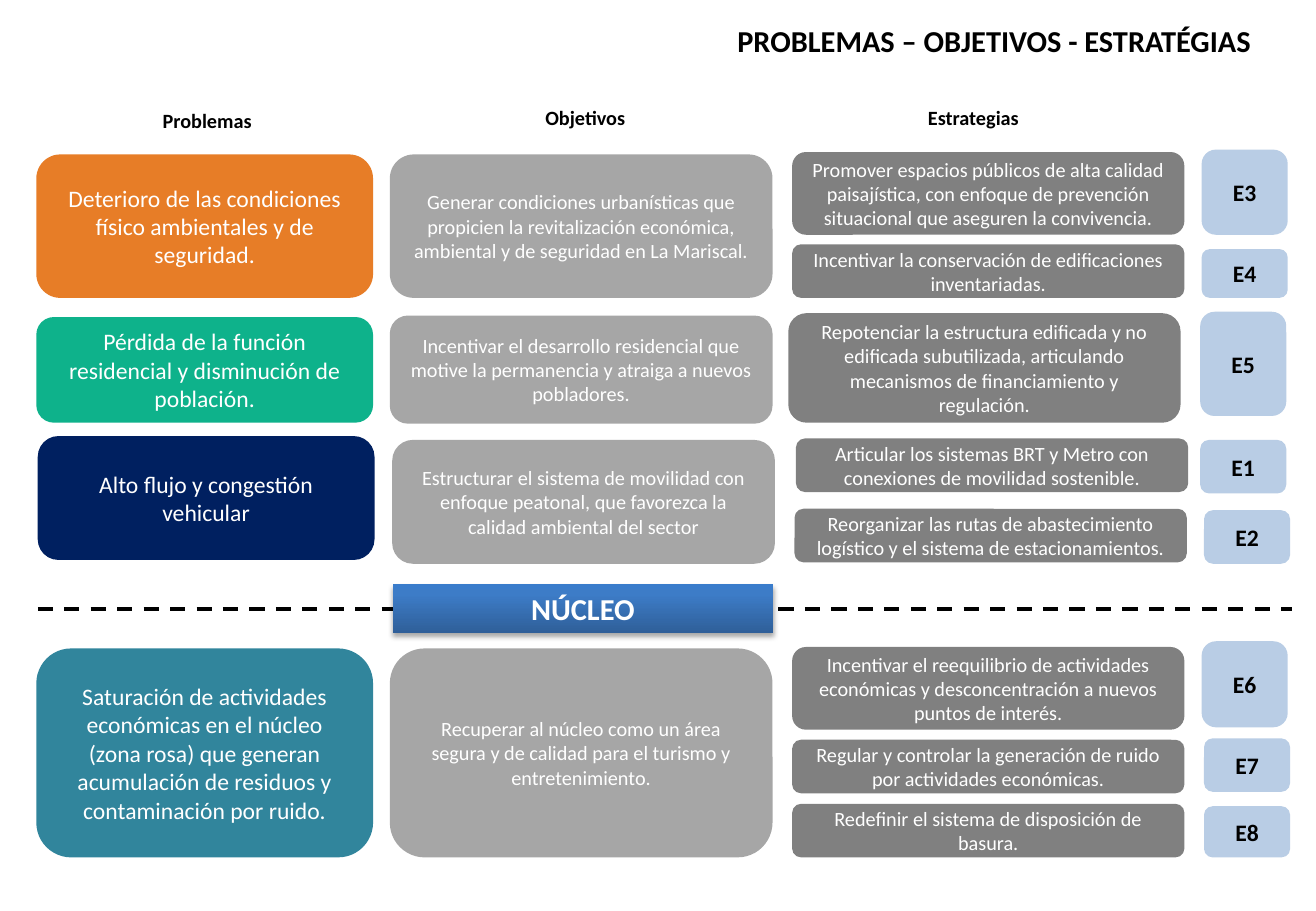
from dataclasses import dataclass

from pptx import Presentation
from pptx.dml.color import RGBColor
from pptx.enum.dml import MSO_LINE_DASH_STYLE as DASH
from pptx.enum.shapes import MSO_CONNECTOR, MSO_SHAPE
from pptx.enum.text import MSO_ANCHOR, MSO_AUTO_SIZE, PP_ALIGN
from pptx.oxml import parse_xml
from pptx.oxml.ns import nsdecls, qn
from pptx.util import Cm, Pt


@dataclass(frozen=True)
class Theme:
    """Colours, font and type sizes of the slide."""
    font: str = "Calibri"
    black: str = "000000"
    white: str = "FFFFFF"
    orange: str = "E46C0A"
    green: str = "0EB28B"
    navy: str = "002060"
    teal: str = "31859C"
    objective: str = "A6A6A6"
    strategy: str = "808080"
    code: str = "B9CDE5"
    core: tuple = ((0, "2F5F99"), (80, "3D7CC7"), (100, "3A7CCB"))
    title_size: int = 18
    large_size: int = 14
    small_size: int = 12


@dataclass(frozen=True)
class Cell:
    """A text with its offset from column left and band top, in cm."""
    text: str
    top: float
    height: float
    shift: float = 0


@dataclass(frozen=True)
class Band:
    """One problem with its objective, strategies and strategy codes."""
    box: tuple
    color: str
    problem: Cell
    objective: Cell
    strategies: tuple
    codes: tuple
    opacity: int = 100


THEME = Theme()
COLUMNS = {"problem": (0, 7.04), "objective": (7.39, 8),
           "strategy": (15.8, 8.2), "code": (24.36, 1.8)}
HEADINGS = (("Problemas", 0, 0.05), ("Objetivos", 8, 0), ("Estrategias", 16, 0))
BANDS = (
    Band((0.76, 3.23), THEME.orange,
         Cell("Deterioro de las condiciones físico ambientales y de seguridad.", 0, 3),
         Cell("Generar condiciones urbanísticas que propicien la revitalización "
              "económica, ambiental y de seguridad en La Mariscal.", 0, 3),
         (Cell("Promover espacios públicos de alta calidad paisajística, con enfoque de "
               "prevención situacional que aseguren la convivencia.", -0.05, 1.73),
          Cell("Incentivar la conservación de edificaciones inventariadas.", 1.88, 1.12)),
         (Cell("E3", -0.1, 1.78), Cell("E4", 1.98, 1.02)), 88),
    Band((0.76, 6.6), THEME.green,
         Cell("Pérdida de la función residencial y disminución de población.", 0.03, 2.21),
         Cell("Incentivar el desarrollo residencial que motive la permanencia y "
              "atraiga a nuevos pobladores.", 0, 2.26),
         (Cell("Repotenciar la estructura edificada y no edificada subutilizada, articulando "
               "mecanismos de financiamiento y regulación.", -0.05, 2.29, -0.08),),
         (Cell("E5", -0.08, 2.18, -0.03),)),
    Band((0.76, 9.12), THEME.navy,
         Cell("Alto flujo y congestión vehicular", 0, 2.59, 0.03),
         Cell("Estructurar el sistema de movilidad con enfoque peatonal, que favorezca "
              "la calidad ambiental del sector", 0.08, 2.59, 0.05),
         (Cell("Articular los sistemas BRT y Metro con conexiones de movilidad sostenible.",
               0.05, 1.12, 0.08),
          Cell("Reorganizar las rutas de abastecimiento logístico y el sistema de "
               "estacionamientos.", 1.52, 1.12, 0.05)),
         (Cell("E1", 0.08, 1.12, -0.03), Cell("E2", 1.55, 1.12, 0.05))),
    Band((0.76, 13.56), THEME.teal,
         Cell("Saturación de actividades económicas en el núcleo (zona rosa) que generan "
              "acumulación de residuos y contaminación por ruido.", 0, 4.37),
         Cell("Recuperar al núcleo como un área segura y de calidad para el turismo y "
              "entretenimiento.", 0, 4.37),
         (Cell("Incentivar el reequilibrio de actividades económicas y desconcentración a "
               "nuevos puntos de interés.", -0.03, 1.73),
          Cell("Regular y controlar la generación de ruido por actividades económicas.",
               1.91, 1.12),
          Cell("Redefinir el sistema de disposición de basura.", 3.25, 1.12)),
         (Cell("E6", -0.15, 1.8), Cell("E7", 1.88, 1.12, 0.05),
          Cell("E8", 3.3, 1.07, 0.05))),
)


def set_values(target, values):
    """Set each named attribute on the target."""
    for name, value in values.items():
        setattr(target, name, value)


def write_text(shape, text, size, color, bold=False, align=PP_ALIGN.CENTER,
               anchor=MSO_ANCHOR.MIDDLE):
    """Write one formatted paragraph into the shape."""
    frame = shape.text_frame
    set_values(frame, {"text": text, "word_wrap": True, "vertical_anchor": anchor,
                       "auto_size": MSO_AUTO_SIZE.NONE})
    paragraph = frame.paragraphs[0]
    paragraph.alignment = align
    set_values(paragraph.font, {"name": THEME.font, "size": Pt(size), "bold": bold})
    paragraph.font.color.rgb = RGBColor.from_string(color)


def add_block(slide, box, kind=MSO_SHAPE.ROUNDED_RECTANGLE):
    """Add a shape without outline or shadow."""
    shape = slide.shapes.add_shape(kind, *map(Cm, box))
    shape.shadow.inherit = False
    shape.line.fill.background()
    return shape


def add_cell(slide, band, column, cell, fill, size=THEME.small_size,
             color=THEME.white, bold=False):
    """Place one rounded cell in its column of the band."""
    offset, width = COLUMNS[column]
    left, top = band.box
    shape = add_block(slide, (left + offset + cell.shift, top + cell.top, width, cell.height))
    shape.fill.solid()
    shape.fill.fore_color.rgb = RGBColor.from_string(fill)
    write_text(shape, cell.text, size, color, bold)
    return shape


def add_band(slide, band):
    """Draw a problem row with its objective, strategies and codes."""
    problem = add_cell(slide, band, "problem", band.problem, band.color, THEME.large_size)
    if band.opacity < 100:
        color = problem.fill._xPr.find(qn("a:solidFill"))[0]
        color.append(parse_xml(f'<a:alpha {nsdecls("a")} val="{band.opacity * 1000}"/>'))
    add_cell(slide, band, "objective", band.objective, THEME.objective)
    for strategy, code in zip(band.strategies, band.codes):
        add_cell(slide, band, "strategy", strategy, THEME.strategy)
        add_cell(slide, band, "code", code, THEME.code, THEME.large_size, THEME.black, True)


def add_title(slide, box):
    """Move and format the title placeholder."""
    title = slide.shapes.title
    set_values(title, dict(zip(("left", "top", "width", "height"), map(Cm, box))))
    write_text(title, "PROBLEMAS – OBJETIVOS - ESTRATÉGIAS", THEME.title_size,
               THEME.black, True, PP_ALIGN.LEFT, MSO_ANCHOR.TOP)


def add_headings(slide, box):
    """Write the column headings from the left of the box."""
    left, top, width, height = box
    for text, offset, drop in HEADINGS:
        heading = slide.shapes.add_textbox(*map(Cm, (left + offset, top + drop, width, height)))
        write_text(heading, text, THEME.small_size, THEME.black, True,
                   PP_ALIGN.LEFT, MSO_ANCHOR.TOP)


def add_divider(slide, box):
    """Draw the dashed line and the core label over it."""
    left, top, width, height = box
    middle = top + height / 2
    line = slide.shapes.add_connector(
        MSO_CONNECTOR.STRAIGHT, *map(Cm, (left, middle, left + width, middle)))
    set_values(line.line, {"width": Pt(2.25), "dash_style": DASH.DASH})
    line.line.color.rgb = RGBColor.from_string(THEME.black)
    line._element.spPr.append(parse_xml(f'<a:effectLst {nsdecls("a")}/>'))

    label = add_block(slide, (left + 7.42, top, 7.95, height), MSO_SHAPE.RECTANGLE)
    write_text(label, "NÚCLEO", THEME.title_size, THEME.white, True)
    stops = "".join(f'<a:gs pos="{position * 1000}"><a:srgbClr val="{color}"/></a:gs>'
                    for position, color in THEME.core)
    properties = label._element.spPr
    properties.find(qn("a:ln")).addprevious(parse_xml(
        f'<a:gradFill {nsdecls("a")} rotWithShape="1"><a:gsLst>{stops}</a:gsLst>'
        '<a:lin ang="16200000" scaled="0"/></a:gradFill>'))
    properties.find(qn("a:effectLst")).append(parse_xml(
        f'<a:outerShdw {nsdecls("a")} blurRad="{Pt(3.1)}" dist="{Pt(1.8)}" dir="5400000" '
        f'rotWithShape="0"><a:srgbClr val="{THEME.black}"><a:alpha val="35000"/>'
        '</a:srgbClr></a:outerShdw>'))


def main():
    """Build and save the slide."""
    presentation = Presentation()
    set_values(presentation, {"slide_width": Cm(27.51), "slide_height": Cm(19.05)})
    slide = presentation.slides.add_slide(presentation.slide_layouts[5])
    add_title(slide, (15.16, 0.33, 12.2, 1.02))
    add_headings(slide, (3.15, 2.08, 3.4, 0.76))
    for band in BANDS:
        add_band(slide, band)
    add_divider(slide, (0.79, 12.22, 26.21, 1.02))
    presentation.save("out.pptx")


if __name__ == "__main__":
    main()
